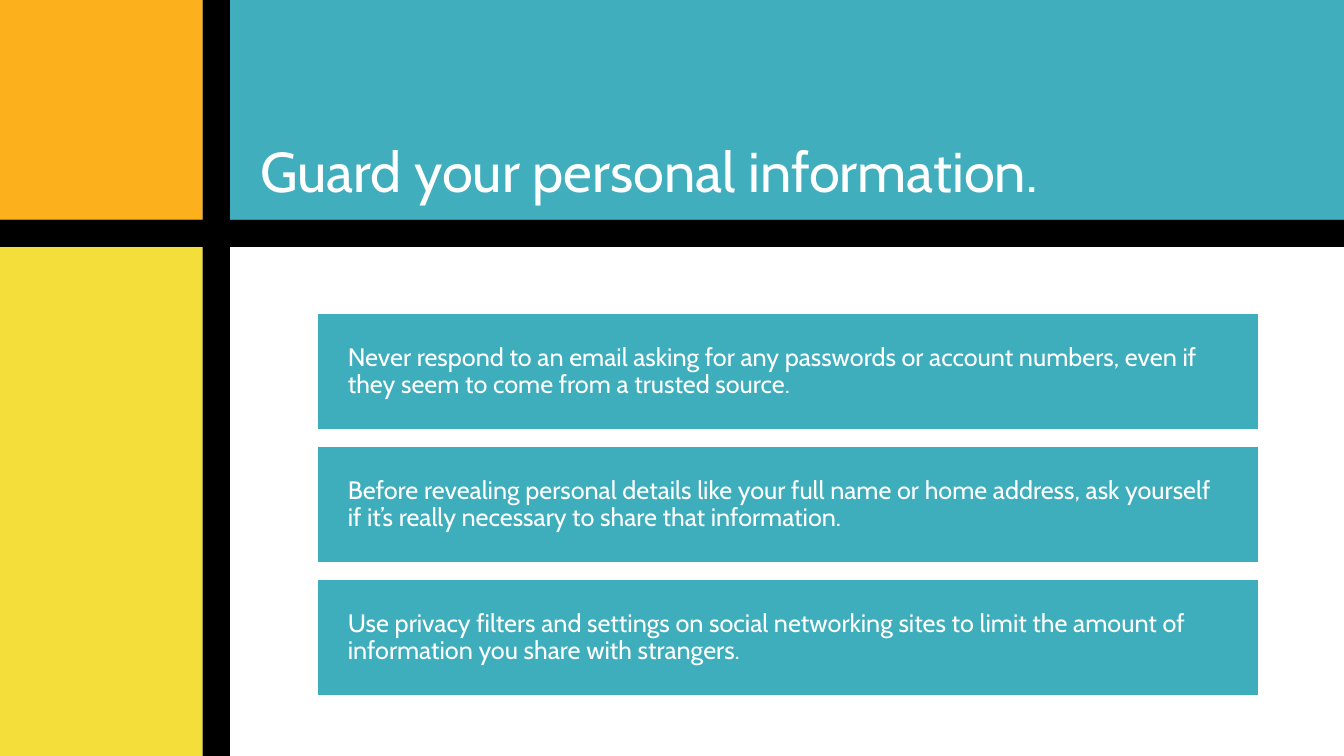
from pptx import Presentation
from pptx.dml.color import RGBColor
from pptx.enum.shapes import MSO_SHAPE
from pptx.enum.text import MSO_ANCHOR, MSO_AUTO_SIZE, PP_ALIGN
from pptx.util import Pt

PX = 9144
SLIDE_W, SLIDE_H = 1333, 750
COLUMN_W, BANNER_H, BAR = 201, 218, 27
CONTENT_X = COLUMN_W + BAR
CONTENT_Y = BANNER_H + BAR

TEAL = RGBColor(0x41, 0xAE, 0xBD)
CARD_TEAL = RGBColor(0x3E, 0xAE, 0xBD)
ORANGE = RGBColor(0xFC, 0xB1, 0x1C)
YELLOW = RGBColor(0xF4, 0xDE, 0x3A)
BLACK = RGBColor(0x00, 0x00, 0x00)
WHITE = RGBColor(0xFF, 0xFF, 0xFF)

HEADLINE = "Guard your personal information."
ADVICE = (
    "Never respond to an email asking for any passwords or account numbers, "
    "even if they seem to come from a trusted source.",
    "Before revealing personal details like your full name or home address, "
    "ask yourself if it’s really necessary to share that information.",
    "Use privacy filters and settings on social networking sites to limit "
    "the amount of information you share with strangers.",
)


def set_all(target, values):
    """Set every attribute named in a dict of format values."""
    for name, value in values.items():
        setattr(target, name, value)


def add_block(slide, box, color):
    """Add a plain filled rectangle without outline or shadow."""
    left, top, width, height = (length * PX for length in box)
    block = slide.shapes.add_shape(MSO_SHAPE.RECTANGLE, left, top, width, height)
    block.shadow.inherit = False
    block.fill.solid()
    block.fill.fore_color.rgb = color
    block.line.fill.background()
    return block


def write(holder, wording, size, anchor, inset_y):
    """Write left-aligned white wording into a shape or placeholder."""
    frame = holder.text_frame
    frame.text = wording
    set_all(frame, {
        "word_wrap": True, "auto_size": MSO_AUTO_SIZE.NONE,
        "vertical_anchor": anchor,
        "margin_left": 30 * PX, "margin_right": 30 * PX,
        "margin_top": inset_y * PX, "margin_bottom": inset_y * PX,
    })
    paragraph = frame.paragraphs[0]
    set_all(paragraph, {"alignment": PP_ALIGN.LEFT, "line_spacing": 0.9})
    font = paragraph.runs[0].font
    set_all(font, {"name": "Cabin", "size": Pt(size)})
    font.color.rgb = WHITE


def build_backdrop(slide, box):
    """Divide the box into colored panels separated by two black bars."""
    left, top, width, height = box
    right_x, lower_y = left + CONTENT_X, top + CONTENT_Y
    panels = (
        ((right_x, top, width - CONTENT_X, BANNER_H), TEAL),
        ((left, top, COLUMN_W, BANNER_H), ORANGE),
        ((left, lower_y, COLUMN_W, height - CONTENT_Y), YELLOW),
        ((left, top + BANNER_H, width, BAR), BLACK),
        ((left + COLUMN_W, top, BAR, height), BLACK),
    )
    for panel_box, color in panels:
        add_block(slide, panel_box, color)


def build_headline(slide, box):
    """Place the title placeholder at the foot of the banner, in front."""
    headline = slide.shapes.title
    left, top, width, height = box
    title_h = 91
    set_all(headline, {
        "left": left * PX, "top": (top + height - title_h) * PX,
        "width": (width - 40) * PX, "height": title_h * PX,
    })
    write(headline, HEADLINE, 40, MSO_ANCHOR.BOTTOM, 15)
    headline.element.getparent().append(headline.element)


def build_advice(slide, box):
    """Stack the advice cards evenly inside the box."""
    left, top, width, height = box
    card_h = 115
    pitch = (height - card_h) // (len(ADVICE) - 1)
    for row, advice in enumerate(ADVICE):
        card = add_block(slide, (left, top + row * pitch, width, card_h), CARD_TEAL)
        card.line.color.rgb = WHITE
        card.line.width = Pt(1)
        write(card, advice, 18, MSO_ANCHOR.MIDDLE, 10)


def main():
    """Build and save the slide."""
    deck = Presentation()
    set_all(deck, {"slide_width": SLIDE_W * PX, "slide_height": SLIDE_H * PX})
    slide = deck.slides.add_slide(deck.slide_layouts[5])
    build_backdrop(slide, (0, 0, SLIDE_W, SLIDE_H))
    build_advice(slide, (CONTENT_X + 87, CONTENT_Y + 66, 933, 379))
    build_headline(slide, (CONTENT_X, 0, SLIDE_W - CONTENT_X, BANNER_H))
    deck.save("out.pptx")


if __name__ == "__main__":
    main()
